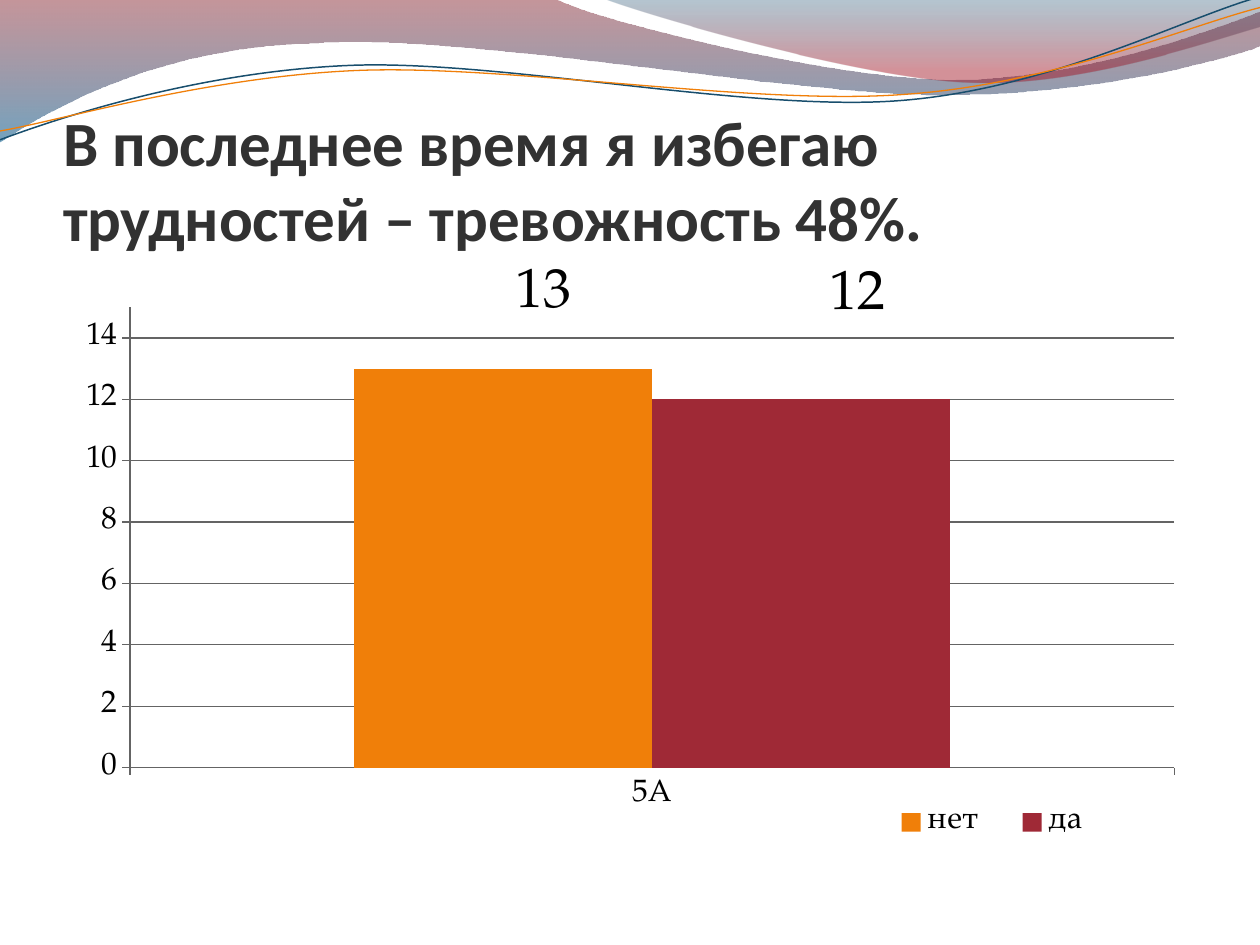
from dataclasses import dataclass
from typing import Optional

from lxml import etree
from pptx import Presentation
from pptx.chart.data import CategoryChartData
from pptx.dml.color import RGBColor
from pptx.enum.chart import XL_CHART_TYPE, XL_LABEL_POSITION, XL_LEGEND_POSITION, XL_TICK_MARK
from pptx.enum.text import MSO_ANCHOR, PP_ALIGN
from pptx.oxml.ns import qn
from pptx.util import Inches, Pt

COLUMNS = XL_CHART_TYPE.COLUMN_CLUSTERED
OUTSIDE_END = XL_LABEL_POSITION.OUTSIDE_END
LEGEND_BOTTOM = XL_LEGEND_POSITION.BOTTOM
TICK_OUTSIDE = XL_TICK_MARK.OUTSIDE
ANCHOR_BOTTOM = MSO_ANCHOR.BOTTOM
ALIGN_LEFT = PP_ALIGN.LEFT
TITLE_ONLY = 5


@dataclass(frozen=True)
class Theme:
    title_font: str = "Calibri"
    chart_font: str = "TeX Gyre Pagella"
    title_size: int = 36
    chart_size: int = 18
    label_size: int = 32
    title: str = "323232"
    text: str = "000000"
    axis: str = "646464"
    orange: str = "F07F09"
    crimson: str = "9F2936"
    navy: str = "184E6D"


@dataclass(frozen=True)
class Stop:
    position: float
    color: str
    opacity: int


@dataclass(frozen=True)
class Wave:
    """Segments are points: 2 numbers for a line, 6 for a Bezier curve."""
    segments: list
    stops: tuple = ()
    line_color: Optional[str] = None
    line_width: float = 0


@dataclass(frozen=True)
class Answer:
    name: str
    value: int
    color: str
    label_shift: tuple


THEME = Theme()

WAVES = [
    # Wide band on the left, then the shorter band on the right
    Wave([(0, 0), (4.4, -0.01), (4.76, 0.17, 6.64, 0.63, 7.58, 0.63),
          (8.53, 0.63, 9.58, 0.26, 10, 0.09), (10.01, 0.36),
          (9.83, 0.44, 8.7, 0.76, 7.46, 0.75), (6.22, 0.75, 3.82, 0.28, 2.57, 0.34),
          (1.29, 0.36, 0.46, 0.83, -0.01, 1.13)],
         stops=(Stop(0, "7E1621", 45), Stop(1, "005689", 55))),
    Wave([(4.79, -0.01), (5.09, 0.11, 6.82, 0.62, 7.69, 0.65),
          (8.56, 0.69, 9.61, 0.32, 10, 0.21), (10, 0)],
         stops=(Stop(0, "094467", 30), Stop(0.8, "A10F1F", 45))),
    # Two thin lines
    Wave([(0, 1.11), (0.48, 0.93, 1.58, 0.57, 2.77, 0.52),
          (3.95, 0.47, 5.93, 0.89, 7.13, 0.8), (8.33, 0.71, 9.38, 0.15, 9.98, -0.02)],
         line_color=THEME.navy, line_width=0.85),
    Wave([(0, 1.04), (0.47, 0.96, 1.64, 0.61, 2.83, 0.56),
          (4.03, 0.51, 5.97, 0.84, 7.17, 0.75), (8.36, 0.67, 9.41, 0.21, 10, 0.06)],
         line_color=THEME.orange, line_width=0.75),
]

ANSWERS = [
    Answer("нет", 13, THEME.orange, (0.036, -0.069)),
    Answer("да", 12, THEME.crimson, (0.05, -0.117)),
]


def rgb(color: str) -> RGBColor:
    return RGBColor.from_string(color)


def bend_curves(shape, segments: list) -> None:
    """Join the three lines through a curve's points into one Bezier curve."""
    lines = iter(list(shape.element.iter(qn("a:lnTo"))))
    for segment in segments[1:]:
        first = next(lines)
        if len(segment) == 2:
            continue
        curve = etree.Element(qn("a:cubicBezTo"))
        first.addprevious(curve)
        for line in (first, next(lines), next(lines)):
            curve.append(line[0])
            line.getparent().remove(line)


def draw_wave(slide, wave: Wave) -> None:
    points = [(Inches(segment[i]), Inches(segment[i + 1]))
              for segment in wave.segments for i in range(0, len(segment), 2)]
    builder = slide.shapes.build_freeform(*points[0])
    builder.add_line_segments(points[1:], close=bool(wave.stops))
    shape = builder.convert_to_shape()
    bend_curves(shape, wave.segments)
    shape.shadow.inherit = False
    if wave.line_color:
        shape.fill.background()
        shape.line.color.rgb = rgb(wave.line_color)
        shape.line.width = Pt(wave.line_width)
        return
    shape.line.fill.background()
    shape.fill.gradient()
    shape.fill.gradient_angle = 270
    for gradient_stop, stop in zip(shape.fill.gradient_stops, wave.stops):
        gradient_stop.color.rgb = rgb(stop.color)
        gradient_stop.position = stop.position
    colors = list(shape.element.spPr.iter(qn("a:srgbClr")))
    for color, stop in zip(colors, wave.stops):
        etree.SubElement(color, qn("a:alpha")).set("val", str(stop.opacity * 1000))


def place(parent, index: int, **values) -> None:
    """Give a chart part a manual layout, in fractions of the chart."""
    for old in parent.findall(qn("c:layout")):
        parent.remove(old)
    layout = etree.Element(qn("c:layout"))
    manual = etree.SubElement(layout, qn("c:manualLayout"))
    for tag, value in values.items():
        etree.SubElement(manual, qn(f"c:{tag}")).set("val", str(value))
    parent.insert(index, layout)


def add_title(slide, text: str) -> None:
    title = slide.shapes.title
    title.left, title.top, title.width, title.height = map(Inches, (0.5, 0.77, 9, 1.25))
    frame = title.text_frame
    frame.text = text
    frame.word_wrap = True
    frame.vertical_anchor = ANCHOR_BOTTOM
    frame.margin_left = frame.margin_right = frame.margin_bottom = 0
    frame.margin_top = Inches(0.05)
    paragraph = frame.paragraphs[0]
    paragraph.alignment = ALIGN_LEFT
    font = paragraph.runs[0].font
    font.name, font.size, font.bold = THEME.title_font, Pt(THEME.title_size), True
    font.color.rgb = rgb(THEME.title)


def style_font(font, size: int) -> None:
    font.name, font.size = THEME.chart_font, Pt(size)
    font.color.rgb = rgb(THEME.text)


def add_answer_chart(slide, category: str, answers: list) -> None:
    data = CategoryChartData()
    data.categories = [category]
    for answer in answers:
        data.add_series(answer.name, [answer.value])
    chart = slide.shapes.add_chart(
        COLUMNS, Inches(0.5), Inches(2.12), Inches(9), Inches(4.8), data).chart
    chart.has_title = False
    style_font(chart.font, THEME.chart_size)

    # Axes
    value_axis = chart.value_axis
    value_axis.minimum_scale, value_axis.maximum_scale = 0, 15
    value_axis.major_unit = 2
    value_axis.has_major_gridlines = True
    value_axis.major_gridlines.format.line.color.rgb = rgb(THEME.axis)
    for axis in (value_axis, chart.category_axis):
        axis.major_tick_mark = TICK_OUTSIDE
        axis.format.line.color.rgb = rgb(THEME.axis)

    # Columns and their labels, without leader lines
    plot = chart.plots[0]
    plot.vary_by_categories = False
    plot.gap_width, plot.overlap = 150, 0
    for series, answer in zip(plot.series, answers):
        series.format.fill.solid()
        series.format.fill.fore_color.rgb = rgb(answer.color)
        series.data_labels.show_value = True
        for label in (series.data_labels, series.points[0].data_label):
            style_font(label.font, THEME.label_size)
            label.position = OUTSIDE_END
    for label, answer in zip(list(chart.element.iter(qn("c:dLbl"))), answers):
        x, y = answer.label_shift
        place(label, 1, x=x, y=y)
    for labels in chart.element.iter(qn("c:dLbls")):
        leader = labels.find(qn("c:showLeaderLines"))
        if leader is None:
            leader = etree.SubElement(labels, qn("c:showLeaderLines"))
        leader.set("val", "0")

    # Legend and plot area
    chart.has_legend = True
    chart.legend.position = LEGEND_BOTTOM
    chart.legend.include_in_layout = False
    place(next(chart.element.iter(qn("c:legend"))), 1,
          xMode="edge", yMode="edge", x=0.71, y=0.877, w=0.219, h=0.08)
    place(next(chart.element.iter(qn("c:plotArea"))), 0, layoutTarget="inner",
          xMode="edge", yMode="edge", x=0.059, y=0.051, w=0.921, h=0.774)


def main() -> None:
    presentation = Presentation()
    presentation.slide_width, presentation.slide_height = Inches(10), Inches(7.5)
    slide = presentation.slides.add_slide(presentation.slide_layouts[TITLE_ONLY])
    for wave in WAVES:
        draw_wave(slide, wave)
    add_title(slide, "В последнее время я избегаю трудностей – тревожность 48%.")
    add_answer_chart(slide, "5А", ANSWERS)
    presentation.save("out.pptx")


if __name__ == "__main__":
    main()
